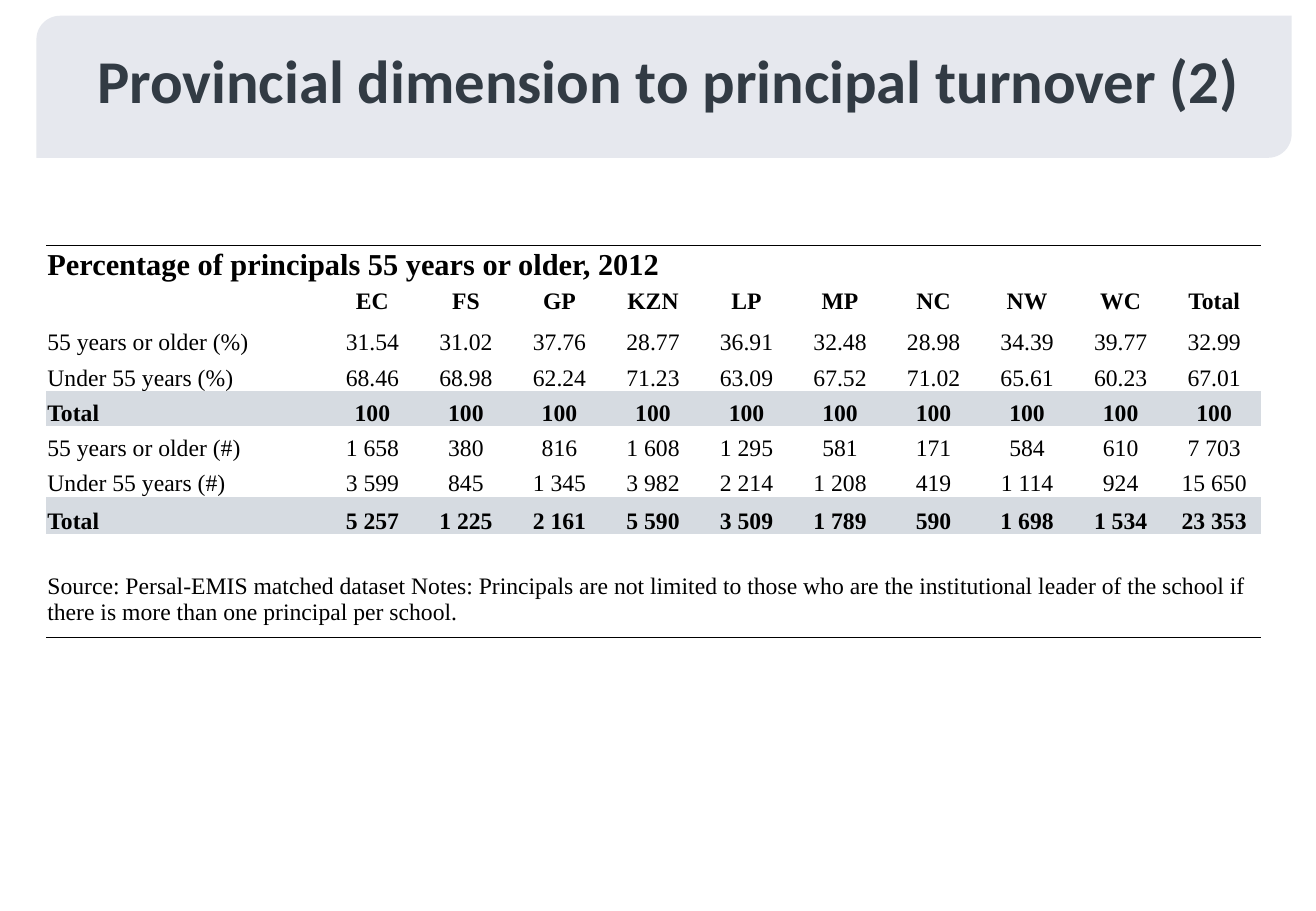
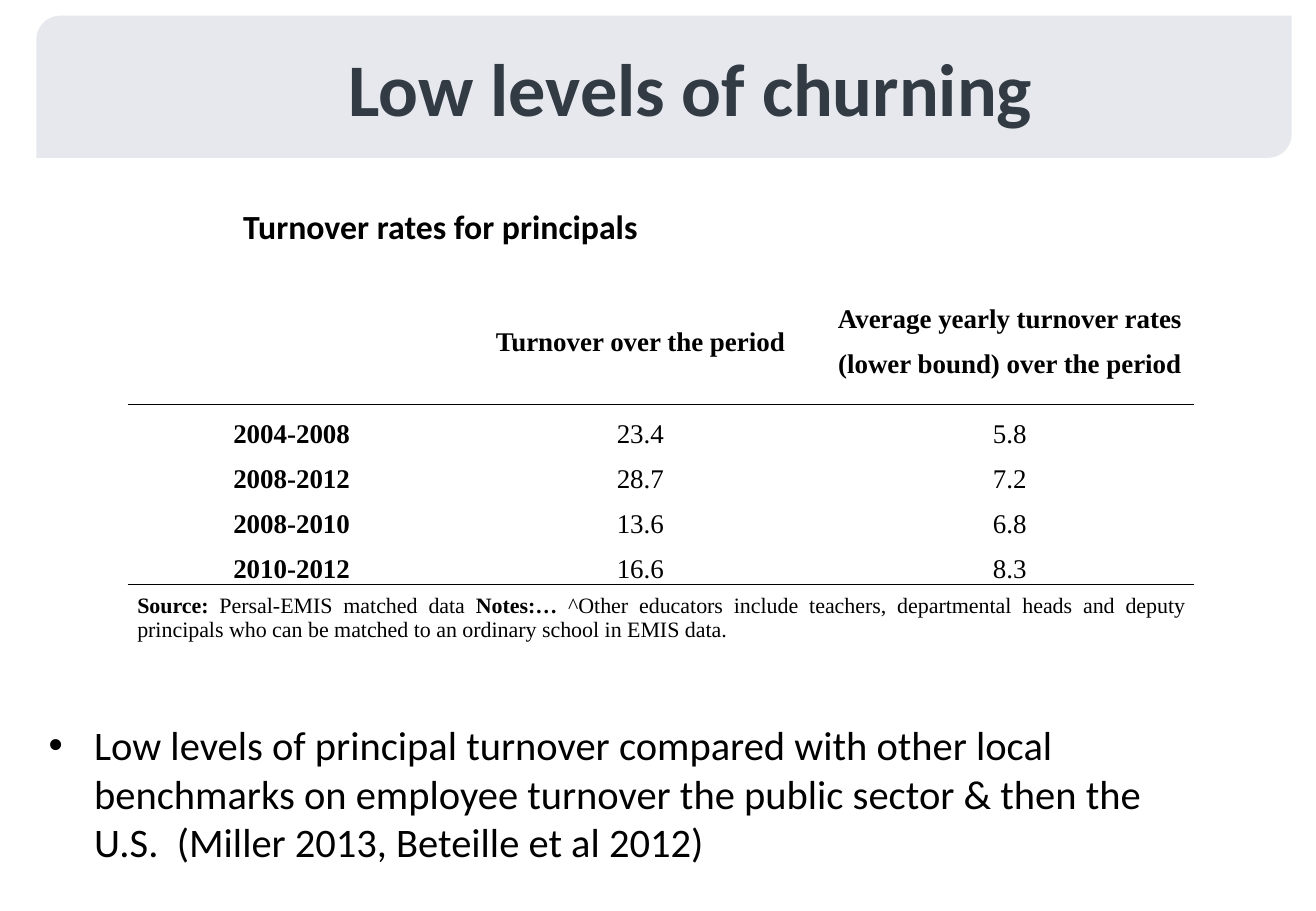
import pptx
import pptx.dml.color
import pptx.enum.shapes
import pptx.enum.text
import pptx.oxml.ns
import pptx.util
import lxml.etree

Inches = pptx.util.Inches
Align = pptx.enum.text.PP_ALIGN
Anchor = pptx.enum.text.MSO_ANCHOR
qualified = pptx.oxml.ns.qn

INK, SLATE, BAND, SHADE = "000000", "323B44", "E6E8EE", "D6DBE1"
SANS, SERIF = "Calibri", "Times New Roman"
PLAIN_TABLE = "{2D5ABB26-0587-4C30-8999-92F81FD0307C}"


def color(value):
    return pptx.dml.color.RGBColor.from_string(value)


class Deck:
    """Holds the shared style and the current slide."""

    def __init__(self, width, height):
        self.presentation = pptx.Presentation()
        self.presentation.slide_width = Inches(width)
        self.presentation.slide_height = Inches(height)
        self.slide = None

    def add_slide(self, layout, title, size, box):
        layouts = self.presentation.slide_layouts
        self.slide = self.presentation.slides.add_slide(layouts.get_by_name(layout))
        self.band()
        self.text(self.slide.shapes.title, title, box, size, SLATE, bold=True,
                  align=Align.CENTER)

    def band(self):
        """Title band, sent behind the title."""
        band = self.slide.shapes.add_shape(
            pptx.enum.shapes.MSO_SHAPE.ROUND_2_DIAG_RECTANGLE,
            Inches(0.3), Inches(0.13), Inches(10.33), Inches(1.17))
        band.shadow.inherit = False
        band.fill.solid()
        band.fill.fore_color.rgb = color(BAND)
        band.line.fill.background()
        self.slide.shapes.element.insert(2, band.element)

    def font(self, paragraph, name, size, ink=INK, bold=False):
        font = paragraph.font
        font.name, font.size, font.bold = name, pptx.util.Pt(size), bold
        font.color.rgb = color(ink)

    def text(self, shape, words, box, size, ink=INK, bold=False, align=Align.LEFT,
             anchor=Anchor.TOP):
        shape.left, shape.top, shape.width, shape.height = map(Inches, box)
        frame = shape.text_frame
        frame.text = words
        frame.word_wrap = True
        frame.auto_size = pptx.enum.text.MSO_AUTO_SIZE.NONE
        frame.vertical_anchor = anchor
        paragraph = frame.paragraphs[0]
        paragraph.alignment = align
        paragraph.space_before = pptx.util.Pt(0)
        self.font(paragraph, SANS, size, ink, bold)

    def text_box(self, words, box, size, **style):
        shape = self.slide.shapes.add_textbox(*map(Inches, box))
        self.text(shape, words, box, size, **style)

    def table(self, left, top, widths, heights):
        frame = self.slide.shapes.add_table(
            len(heights), len(widths), Inches(left), Inches(top),
            Inches(sum(widths)), Inches(sum(heights)))
        table = frame.table
        table.first_row = table.horz_banding = False
        table._tbl.tblPr.find(qualified("a:tableStyleId")).text = PLAIN_TABLE
        for column, width in zip(table.columns, widths):
            column.width = Inches(width)
        for row, height in zip(table.rows, heights):
            row.height = Inches(height)
        return table

    def cell(self, cell, runs, size, margins, bold=False, align=Align.CENTER,
             anchor=Anchor.MIDDLE, fill=None, spacing=None):
        """Fill a cell; runs is a string or a list of (text, bold)."""
        (cell.margin_left, cell.margin_top,
         cell.margin_right, cell.margin_bottom) = map(Inches, margins)
        cell.vertical_anchor = anchor
        if fill:
            cell.fill.solid()
            cell.fill.fore_color.rgb = color(fill)
        else:
            cell.fill.background()
        paragraph = cell.text_frame.paragraphs[0]
        paragraph.alignment = align
        if spacing:
            paragraph.line_spacing = spacing
        if not runs:
            end = lxml.etree.SubElement(paragraph._p, qualified("a:endParaRPr"))
            end.set("sz", str(size * 100))
        elif isinstance(runs, str):
            paragraph.text = runs
        else:
            for words, run_bold in runs:
                run = paragraph.add_run()
                run.text = words
                run.font.bold = run_bold
        self.font(paragraph, SERIF, size, bold=bold)

    def rules(self, table, lines):
        """Draw 1 pt lines at the given row boundaries and clear the others."""
        for index, row in enumerate(table.rows):
            for cell in row.cells:
                properties = cell._tc.get_or_add_tcPr()
                for edge, boundary in (("B", index + 1), ("T", index)):
                    line = lxml.etree.Element(qualified("a:ln" + edge), w="12700")
                    if boundary in lines:
                        fill = lxml.etree.SubElement(line, qualified("a:solidFill"))
                        lxml.etree.SubElement(fill, qualified("a:srgbClr"), val=INK)
                    else:
                        lxml.etree.SubElement(line, qualified("a:noFill"))
                    properties.insert(0, line)


def province_slide(deck):
    deck.add_slide("Title Only", "Provincial dimension to principal turnover (2)",
                   36, (0.38, 0.3, 10.24, 1.25))
    rows = [
        ["", "EC", "FS", "GP", "KZN", "LP", "MP", "NC", "NW", "WC", "Total"],
        ["55 years or older (%)", "31.54", "31.02", "37.76", "28.77", "36.91",
         "32.48", "28.98", "34.39", "39.77", "32.99"],
        ["Under 55 years (%)", "68.46", "68.98", "62.24", "71.23", "63.09",
         "67.52", "71.02", "65.61", "60.23", "67.01"],
        ["Total"] + ["100"] * 10,
        ["55 years or older (#)", "1 658", "380", "816", "1 608", "1 295",
         "581", "171", "584", "610", "7 703"],
        ["Under 55 years (#)", "3 599", "845", "1 345", "3 982", "2 214",
         "1 208", "419", "1 114", "924", "15 650"],
        ["Total", "5 257", "1 225", "2 161", "5 590", "3 509",
         "1 789", "590", "1 698", "1 534", "23 353"],
    ]
    table = deck.table(0.38, 2.02, [2.3] + [0.77] * 10,
                       [0.31] + [0.3] * 2 + [0.29] * 4 + [0.31, 0.85])
    margins = (0.01, 0.01, 0.01, 0)

    # Caption row
    table.cell(0, 0).merge(table.cell(0, 5))
    deck.cell(table.cell(0, 0), "Percentage of principals 55 years or older, 2012",
              18, margins, bold=True, align=Align.LEFT)
    for column in range(6, 11):
        deck.cell(table.cell(0, column), "", 18, margins)

    # Header and figures
    for row, values in enumerate(rows, 1):
        header, total = row == 1, values[0] == "Total"
        for column, value in enumerate(values):
            deck.cell(table.cell(row, column), value, 14, margins,
                      bold=header or total,
                      align=Align.CENTER if column else Align.LEFT,
                      anchor=Anchor.MIDDLE if header else Anchor.BOTTOM,
                      fill=SHADE if total else None)

    # Source row
    table.cell(8, 0).merge(table.cell(8, 10))
    deck.cell(table.cell(8, 0),
              "Source: Persal-EMIS matched dataset Notes: Principals are not limited to "
              "those who are the institutional leader of the school if there is more "
              "than one principal per school.",
              14, (0.01, 0.22, 0.01, 0), align=Align.LEFT)
    deck.rules(table, (0, 9))


def churning_slide(deck):
    deck.add_slide("Title and Content", "Low levels of churning",
                   44, (1.07, 0.3, 9.23, 0.77))
    rows = [
        ["", "Turnover over the period",
         "Average yearly turnover rates (lower bound) over the period"],
        ["2004-2008", "23.4", "5.8"],
        ["2008-2012", "28.7", "7.2"],
        ["2008-2010", "13.6", "6.8"],
        ["2010-2012", "16.6", "8.3"],
    ]
    table = deck.table(1.05, 2.18, [2.7, 3.04, 3.04], [1.15] + [0.37] * 4 + [0.56])
    margins = (0.08, 0, 0.08, 0)

    # Header and rates
    for row, values in enumerate(rows):
        for column, value in enumerate(values):
            deck.cell(table.cell(row, column), value, 16, margins,
                      bold=row == 0 or column == 0, spacing=1.5)

    # Source row
    table.cell(5, 0).merge(table.cell(5, 2))
    deck.cell(table.cell(5, 0), [
        ("Source: ", True), ("Persal-EMIS matched data", False), (" Notes:…", True),
        (" ^Other educators include teachers, departmental heads and deputy principals "
         "who can be matched to an ordinary school in EMIS data.", False)],
        13, margins, align=Align.JUSTIFY)
    deck.rules(table, (1, 5))

    # Table heading and conclusion
    deck.text_box("Turnover rates for principals", (1.24, 1.64, 4.77, 0.44), 20,
                  bold=True, align=Align.CENTER, anchor=Anchor.MIDDLE)
    deck.text(deck.slide.placeholders[1],
              "Low levels of principal turnover compared with other local benchmarks on "
              "employee turnover the public sector & then the U.S.  (Miller 2013, "
              "Beteille et al 2012)", (0.3, 5.88, 9.32, 1.31), 24)


def main():
    deck = Deck(10.83, 7.5)
    province_slide(deck)
    churning_slide(deck)
    deck.presentation.save("out.pptx")


if __name__ == "__main__":
    main()
